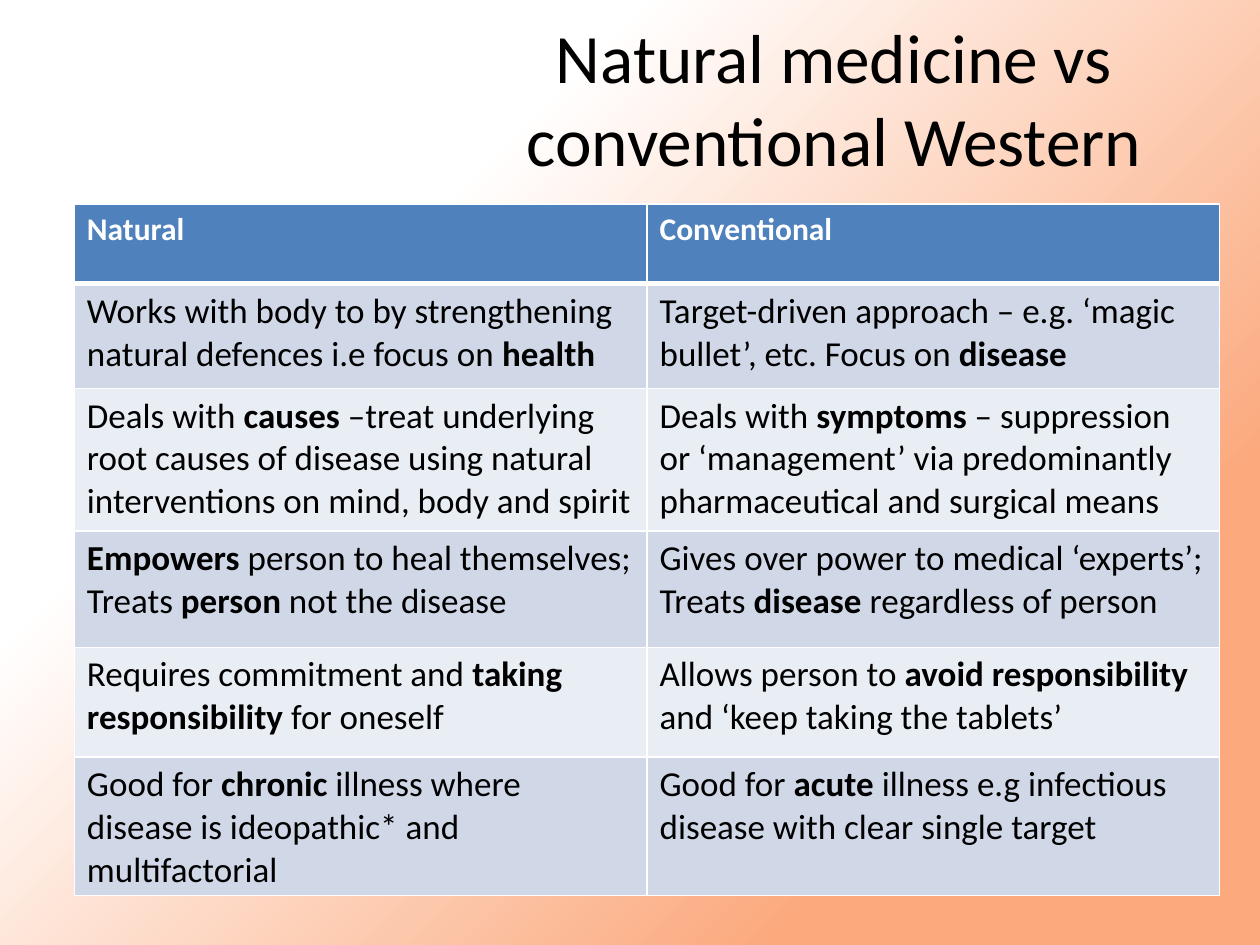
"""Build a slide comparing natural and conventional medicine in a table."""
from dataclasses import dataclass
from typing import NamedTuple

from lxml.etree import SubElement
from pptx import Presentation
from pptx.dml.color import RGBColor
from pptx.enum.text import MSO_ANCHOR, PP_ALIGN
from pptx.oxml.ns import qn
from pptx.util import Inches, Pt


@dataclass(frozen=True)
class Theme:
    font: str = "Calibri"
    text: str = "000000"
    light: str = "FFFFFF"
    glow: str = "FBA97D"
    header: str = "4F81BD"
    bands: tuple[str, str] = ("D0D8E8", "E9EDF4")
    title_size: float = 39.6
    header_size: float = 18
    body_size: float = 20
    border: float = 1
    header_border: float = 3


class Area(NamedTuple):
    left: float
    top: float
    width: float
    height: float


class Span(NamedTuple):
    text: str
    bold: bool = False


class Row(NamedTuple):
    height: float
    natural: list[Span]
    conventional: list[Span]


THEME = Theme()
WIDTH, HEIGHT = Inches(10), Inches(7.5)
TITLE_AREA = Area(0.374, 0.019, 0.576, 0.167)
TABLE_AREA = Area(0.059, 0.216, 0.909, 0.685)
ROWS = [
    Row(0.084, [Span("Natural", True)], [Span("Conventional", True)]),
    Row(0.111,
        [Span("Works with body to by strengthening natural defences i.e focus on "), Span("health", True)],
        [Span("Target-driven approach – e.g. ‘magic bullet’, etc. Focus on "), Span("disease", True)]),
    Row(0.151,
        [Span("Deals with "), Span("causes ", True),
         Span("–treat underlying root causes of disease using natural interventions on mind, body and spirit")],
        [Span("Deals with "), Span("symptoms", True),
         Span(" – suppression or ‘management’ via predominantly pharmaceutical and surgical means")]),
    Row(0.123,
        [Span("Empowers", True), Span(" person to heal themselves; Treats "),
         Span("person", True), Span(" not the disease")],
        [Span("Gives over power to medical ‘experts’; Treats "),
         Span("disease ", True), Span("regardless of person")]),
    Row(0.116,
        [Span("Requires commitment and "), Span("taking responsibility", True), Span(" for oneself")],
        [Span("Allows person to "), Span("avoid responsibility ", True), Span("and ‘keep taking the tablets’")]),
    Row(0.069,
        [Span("Good for "), Span("chronic", True),
         Span(" illness where disease is ideopathic* and multifactorial")],
        [Span("Good for "), Span("acute", True),
         Span(" illness e.g infectious disease with clear single target")]),
]


def place(area: Area) -> tuple[int, int, int, int]:
    """Turn shares of the slide into lengths."""
    return (round(area.left * WIDTH), round(area.top * HEIGHT),
            round(area.width * WIDTH), round(area.height * HEIGHT))


def write_spans(paragraph, spans: list[Span], size: float, color: str) -> None:
    """Add styled runs to a paragraph."""
    for span in spans:
        run = paragraph.add_run()
        run.text = span.text
        run.font.name = THEME.font
        run.font.size = Pt(size)
        run.font.bold = span.bold
        run.font.color.rgb = RGBColor.from_string(color)


def paint_background(slide) -> None:
    """Fill the slide with a diagonal gradient."""
    fill = slide.background.fill
    fill.gradient()
    fill.gradient_angle = 315
    stops = ((0.29, THEME.light), (0.78, THEME.glow))
    for stop, (position, color) in zip(fill.gradient_stops, stops):
        stop.position = position
        stop.color.rgb = RGBColor.from_string(color)


def add_title(slide, text: str) -> None:
    """Add the centred title."""
    frame = slide.shapes.add_textbox(*place(TITLE_AREA)).text_frame
    frame.word_wrap = True
    frame.vertical_anchor = MSO_ANCHOR.MIDDLE
    paragraph = frame.paragraphs[0]
    paragraph.alignment = PP_ALIGN.CENTER
    write_spans(paragraph, [Span(text)], THEME.title_size, THEME.text)


def draw_borders(cell, top: float, bottom: float) -> None:
    """Outline a cell with lines of the given widths in points."""
    properties = cell._tc.get_or_add_tcPr()
    widths = {"a:lnL": THEME.border, "a:lnR": THEME.border, "a:lnT": top, "a:lnB": bottom}
    for tag, width in widths.items():
        line = SubElement(properties, qn(tag), w=str(Pt(width)))
        SubElement(SubElement(line, qn("a:solidFill")), qn("a:srgbClr"), val=THEME.light)


def fill_cell(cell, spans: list[Span], row_index: int) -> None:
    """Style and write one table cell."""
    is_header = row_index == 0
    top = THEME.header_border if row_index == 1 else THEME.border
    bottom = THEME.header_border if is_header else THEME.border
    draw_borders(cell, top, bottom)
    color = THEME.header if is_header else THEME.bands[(row_index - 1) % 2]
    cell.fill.solid()
    cell.fill.fore_color.rgb = RGBColor.from_string(color)
    write_spans(cell.text_frame.paragraphs[0], spans,
                THEME.header_size if is_header else THEME.body_size,
                THEME.light if is_header else THEME.text)


def add_comparison(slide, rows: list[Row]) -> None:
    """Add the two-column comparison table."""
    table = slide.shapes.add_table(len(rows), 2, *place(TABLE_AREA)).table
    for row_index, row in enumerate(rows):
        table.rows[row_index].height = round(row.height * HEIGHT)
        for column_index, spans in enumerate((row.natural, row.conventional)):
            fill_cell(table.cell(row_index, column_index), spans, row_index)


def main() -> None:
    """Build and save the presentation."""
    presentation = Presentation()
    presentation.slide_width, presentation.slide_height = WIDTH, HEIGHT
    slide = presentation.slides.add_slide(presentation.slide_layouts[6])
    paint_background(slide)
    add_title(slide, "Natural medicine vs conventional Western")
    add_comparison(slide, ROWS)
    presentation.save("out.pptx")


if __name__ == "__main__":
    main()
